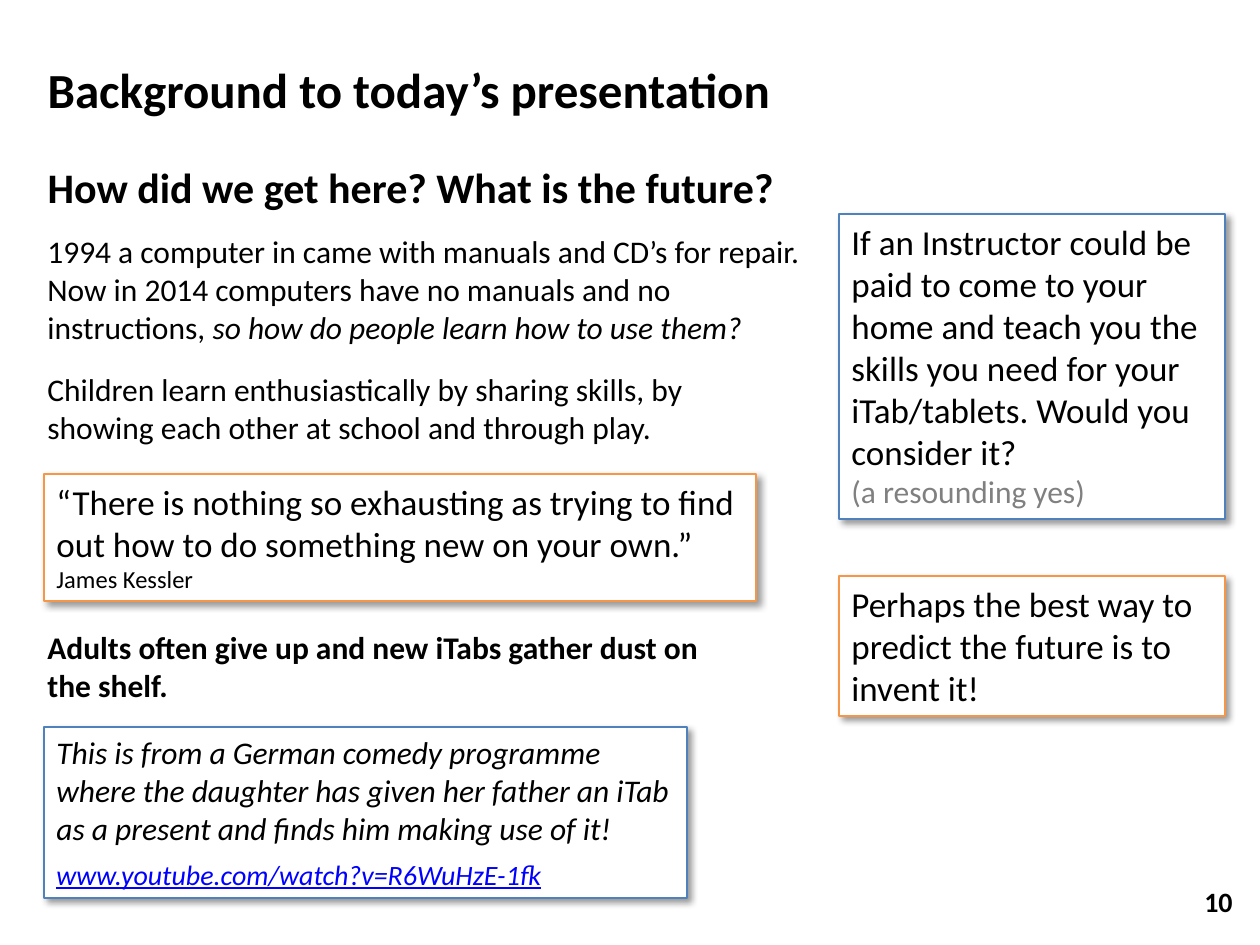
from dataclasses import dataclass, field
from typing import Optional

from lxml.etree import SubElement
from pptx import Presentation
from pptx.dml.color import RGBColor
from pptx.enum.shapes import MSO_SHAPE as Preset
from pptx.enum.text import MSO_ANCHOR as Anchor, MSO_AUTO_SIZE as AutoSize, PP_ALIGN as Align
from pptx.oxml.ns import qn
from pptx.util import Emu, Pt

PX = 914400 / 126  # EMU in one px


@dataclass(frozen=True)
class Theme:
    font: str = "Calibri"
    ink: str = "000000"
    paper: str = "FFFFFF"
    muted: str = "808080"
    link: str = "0000FF"
    blue: str = "4F81BD"
    orange: str = "F79646"
    title: int = 28
    heading: int = 24
    callout: int = 20
    text: int = 18
    small: int = 16
    source: int = 14


THEME = Theme()


@dataclass
class Words:
    text: str
    size: int = THEME.text
    color: str = THEME.ink
    style: dict = field(default_factory=dict)
    new_line: bool = False  # starts on a new line of the same paragraph


@dataclass
class Passage:
    box: tuple[int, int, int, int]  # left, top, width, height in px
    paragraphs: list[list[Words]]
    border: Optional[str] = None
    gap: int = 0  # points between paragraphs


BOLD, ITALIC = {"bold": True}, {"italic": True}
MARGIN, FRAME_LEFT, SIDE_LEFT, SIDE_WIDTH = 35, 44, 839, 386

TITLE = Passage((MARGIN, 53, 1216, 72), [
    [Words("Background to today’s presentation", THEME.title, style=BOLD)]])
HEADING = Passage((MARGIN, 155, 1191, 665), [
    [Words("How did we get here? What is the future?", THEME.heading, style=BOLD)]])
PAGE_NUMBER = Passage((951, 876, 294, 50), [[Words("10", THEME.small, style=BOLD)]])

STORY = [
    Passage((MARGIN, 226, 794, 127), [
        [Words("1994 a computer in came with manuals and CD’s for repair.")],
        [Words("Now in 2014 computers have no manuals and no instructions, "),
         Words("so how do people learn how to use them?", style=ITALIC)]]),
    Passage((MARGIN, 364, 764, 89), [
        [Words("Children learn enthusiastically by sharing skills, by showing "
               "each other at school and through play.")]]),
    Passage((MARGIN, 622, 722, 89), [
        [Words("Adults often give up and new iTabs gather dust on the shelf.", style=BOLD)]]),
]

CALLOUTS = [
    Passage((SIDE_LEFT, 576, SIDE_WIDTH, 140), [
        [Words("Perhaps the best way to predict the future is to invent it!", THEME.callout)]],
        THEME.orange),
    Passage((SIDE_LEFT, 214, SIDE_WIDTH, 305), [
        [Words("If an Instructor could be paid to come to your home and teach you the "
               "skills you need for your iTab/tablets. Would you consider it?", THEME.callout),
         Words("(a resounding yes)", color=THEME.muted, new_line=True)]],
        THEME.blue),
    Passage((FRAME_LEFT, 727, 643, 171), [
        [Words("This is from a German comedy programme where the daughter has given her "
               "father an iTab as a present and finds him making use of it!", style=ITALIC)],
        [Words("www.youtube.com/watch?v=R6WuHzE-1fk", THEME.small, THEME.link,
               {"italic": True, "underline": True})]],
        THEME.blue, gap=6),
    Passage((FRAME_LEFT, 474, 712, 127), [
        [Words("“There is nothing so exhausting as trying to find out how to do "
               "something new on your own.”", THEME.callout)],
        [Words("James Kessler", THEME.source)]],
        THEME.orange),
]


def emu(box: tuple[int, ...]) -> list[Emu]:
    return [Emu(round(length * PX)) for length in box]


def write(shape, passage: Passage, align=Align.LEFT, anchor=Anchor.TOP) -> None:
    """Fill a shape with the formatted paragraphs of a passage."""
    frame = shape.text_frame
    frame_format = {"word_wrap": True, "auto_size": AutoSize.NONE, "vertical_anchor": anchor}
    for name, value in frame_format.items():
        setattr(frame, name, value)
    for index, line in enumerate(passage.paragraphs):
        paragraph = frame.add_paragraph() if index else frame.paragraphs[0]
        paragraph.alignment = align
        paragraph.space_before = Pt(passage.gap if index else 0)
        for words in line:
            if words.new_line:
                paragraph.add_line_break()
            run = paragraph.add_run()
            run.text = words.text
            run_format = {"name": THEME.font, "size": Pt(words.size), **words.style}
            for name, value in run_format.items():
                setattr(run.font, name, value)
            run.font.color.rgb = RGBColor.from_string(words.color)


def fill_placeholder(shape, passage: Passage) -> None:
    shape.left, shape.top, shape.width, shape.height = emu(passage.box)
    write(shape, passage)


def add_text(slide, passage: Passage, **layout) -> None:
    write(slide.shapes.add_textbox(*emu(passage.box)), passage, **layout)


def add_shadow(shape) -> None:
    """Soft shadow towards the lower right."""
    shape.shadow.inherit = False
    effects = shape._element.spPr.find(qn("a:effectLst"))
    shadow = SubElement(effects, qn("a:outerShdw"), blurRad=str(Pt(4)), dist=str(Pt(3)),
                        dir="2700000", algn="tl", rotWithShape="0")
    color = SubElement(shadow, qn("a:srgbClr"), val=THEME.ink)
    SubElement(color, qn("a:alpha"), val="40000")


def add_callout(slide, passage: Passage) -> None:
    shape = slide.shapes.add_shape(Preset.RECTANGLE, *emu(passage.box))
    shape.fill.solid()
    shape.fill.fore_color.rgb = RGBColor.from_string(THEME.paper)
    shape.line.color.rgb = RGBColor.from_string(passage.border)
    shape.line.width = Pt(1.5)
    add_shadow(shape)
    write(shape, passage)


def main() -> None:
    deck = Presentation()
    deck.slide_width, deck.slide_height = emu((1260, 945))
    slide = deck.slides.add_slide(deck.slide_layouts[1])

    # Title and heading
    title, heading = slide.placeholders
    fill_placeholder(title, TITLE)
    properties = heading.text_frame.paragraphs[0]._p.get_or_add_pPr()
    properties.set("marL", "0")
    properties.set("indent", "0")
    SubElement(properties, qn("a:buNone"))
    fill_placeholder(heading, HEADING)

    # Page number
    add_text(slide, PAGE_NUMBER, align=Align.RIGHT, anchor=Anchor.MIDDLE)

    # Running story and framed callouts
    for passage in STORY:
        add_text(slide, passage)
    for passage in CALLOUTS:
        add_callout(slide, passage)

    deck.save("out.pptx")


if __name__ == "__main__":
    main()
